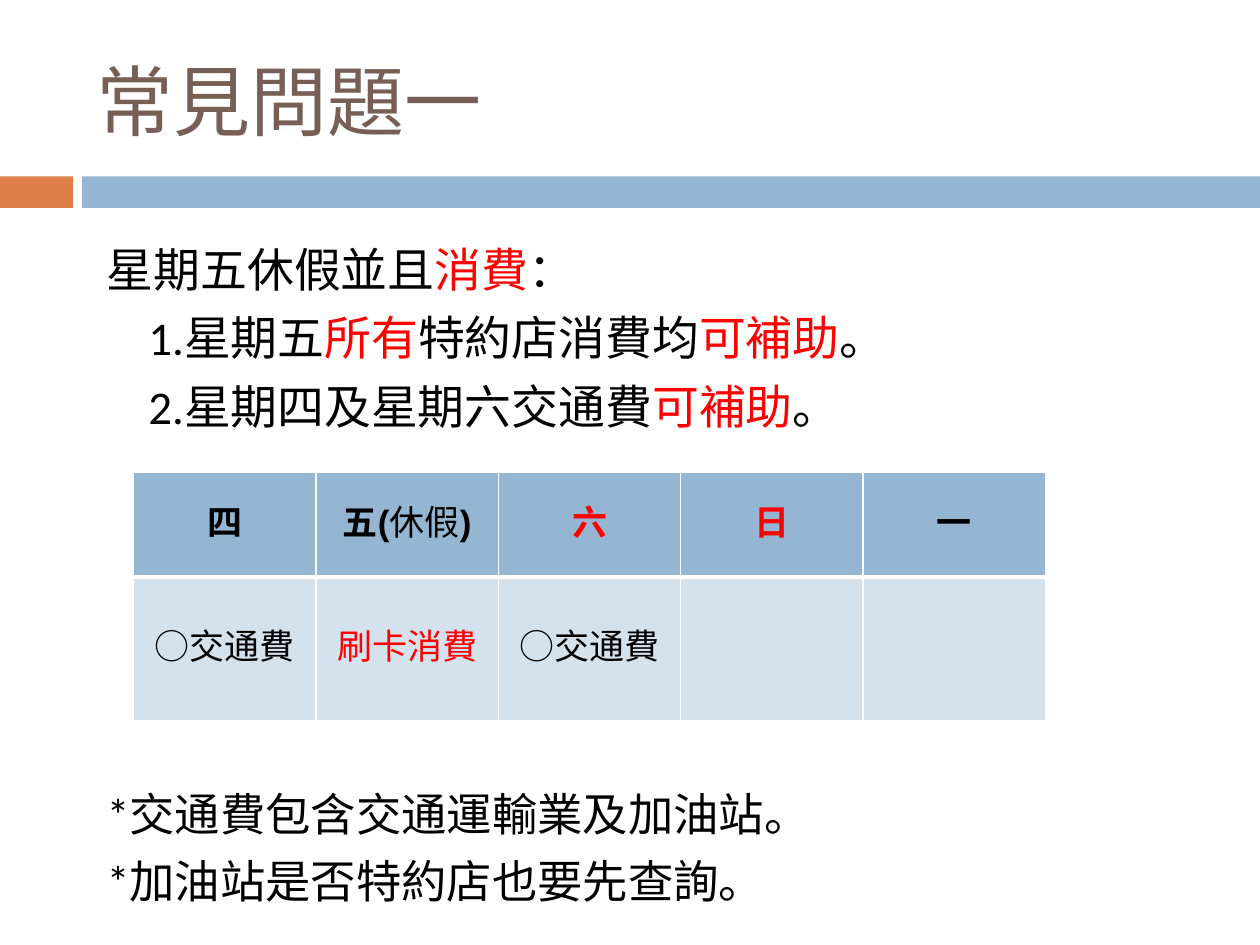
from lxml.etree import SubElement
from pptx import Presentation
from pptx.dml.color import RGBColor
from pptx.enum.shapes import MSO_SHAPE as Shape
from pptx.enum.text import MSO_ANCHOR as Anchor, PP_ALIGN as Align
from pptx.oxml.ns import qn
from pptx.util import Inches, Pt

COLOURS = {
    "title": "775F55", "text": "000000", "alert": "FF0000", "accent": "DD8047",
    "band": "94B6D2", "cell": "D4E2ED", "border": "FFFFFF",
}
COLUMNS, ROWS = 100, 75

HEADER = ["四", "五(|休假|)", "六", "日", "一"]
ENTRIES = ["○交通費", "刷卡消費", "○交通費", "", ""]
ALERTS = {"六", "日", "刷卡消費"}


def colour(name):
    return RGBColor.from_string(COLOURS[name])


class SlideBuilder:
    """Draws on one slide; places are (left, top, width, height) in grid units."""

    def __init__(self, presentation):
        self.slide = presentation.slides.add_slide(presentation.slide_layouts[6])
        self.column = presentation.slide_width / COLUMNS
        self.row = presentation.slide_height / ROWS

    def place(self, left, top, width, height):
        return (round(left * self.column), round(top * self.row),
                round(width * self.column), round(height * self.row))

    def bar(self, place, fill):
        shape = self.slide.shapes.add_shape(Shape.RECTANGLE, *self.place(*place))
        shape.shadow.inherit = False
        shape.fill.solid()
        shape.fill.fore_color.rgb = colour(fill)
        shape.line.fill.background()

    def font(self, paragraph, size, name="Calibri", shade="text", bold=False):
        font = paragraph.font
        font.size, font.name, font.bold = Pt(size), name, bold
        font.color.rgb = colour(shade)

    def text(self, place, lines, size, shade="text", before=0, anchor=Anchor.TOP):
        """Lines are (indent, text); every second piece between bars is an alert."""
        frame = self.slide.shapes.add_textbox(*self.place(*place)).text_frame
        frame.word_wrap = True
        frame.vertical_anchor = anchor
        for number, (indent, line) in enumerate(lines):
            paragraph = frame.add_paragraph() if number else frame.paragraphs[0]
            paragraph.space_before = Pt(before)
            self.font(paragraph, size, shade=shade)
            paragraph._p.get_or_add_pPr().set("marL", str(round(indent * self.column)))
            for position, piece in enumerate(line.split("|")):
                run = paragraph.add_run()
                run.text = piece
                if position % 2:
                    run.font.color.rgb = colour("alert")

    def border(self, cell, side, width):
        line = SubElement(cell._tc.get_or_add_tcPr(), qn(f"a:ln{side}"), w=str(Pt(width)))
        fill = SubElement(line, qn("a:solidFill"))
        SubElement(fill, qn("a:srgbClr"), val=COLOURS["border"])

    def cell(self, cell, text, header):
        """Header pieces are bold, except every second one between bars."""
        widths = {"L": 1, "R": 1, "T": 1 if header else 3, "B": 3 if header else 1}
        for side, width in widths.items():
            self.border(cell, side, width)
        cell.fill.solid()
        cell.fill.fore_color.rgb = colour("band" if header else "cell")
        cell.vertical_anchor = Anchor.MIDDLE
        cell.margin_left = cell.margin_right = Inches(0.07)
        cell.margin_top = cell.margin_bottom = 0
        paragraph = cell.text_frame.paragraphs[0]
        paragraph.alignment = Align.CENTER
        paragraph.line_spacing = Pt(24)
        shade = "alert" if text in ALERTS else "text"
        self.font(paragraph, 20, "Arial", shade, header)
        for position, piece in enumerate(text.split("|") if text else []):
            run = paragraph.add_run()
            run.text = piece
            run.font.bold = header and position % 2 == 0

    def table(self, place, rows, heights):
        table = self.slide.shapes.add_table(
            len(rows), len(rows[0]), *self.place(*place)).table
        for number, (texts, height) in enumerate(zip(rows, heights)):
            table.rows[number].height = round(height * self.row)
            for column, text in enumerate(texts):
                self.cell(table.cell(number, column), text, header=number == 0)


def main():
    presentation = Presentation()
    presentation.slide_width, presentation.slide_height = Inches(10), Inches(7.5)
    builder = SlideBuilder(presentation)
    builder.bar((0, 14, 5.8, 2.5), "accent")
    builder.bar((6.5, 14, 93.5, 2.5), "band")
    builder.text((6.7, 2.5, 89.2, 10.8), [(0, "常見問題一")], 44, "title",
                 anchor=Anchor.MIDDLE)
    builder.text((7.5, 18.6, 89.2, 17.5), [
        (0, "星期五休假並且|消費|："),
        (3.3, "1.星期五|所有|特約店消費均|可補助|。"),
        (3.3, "2.星期四及星期六交通費|可補助|。"),
    ], 26.8, before=7)
    builder.table((10.6, 37.5, 72.4, 19.7), [HEADER, ENTRIES], (8.3, 11.4))
    builder.text((7.5, 61.9, 89.2, 11.5), [
        (0, "*交通費包含交通運輸業及加油站。"),
        (0, "*加油站是否特約店也要先查詢。"),
    ], 25.9, before=7)
    presentation.save("out.pptx")


if __name__ == "__main__":
    main()
